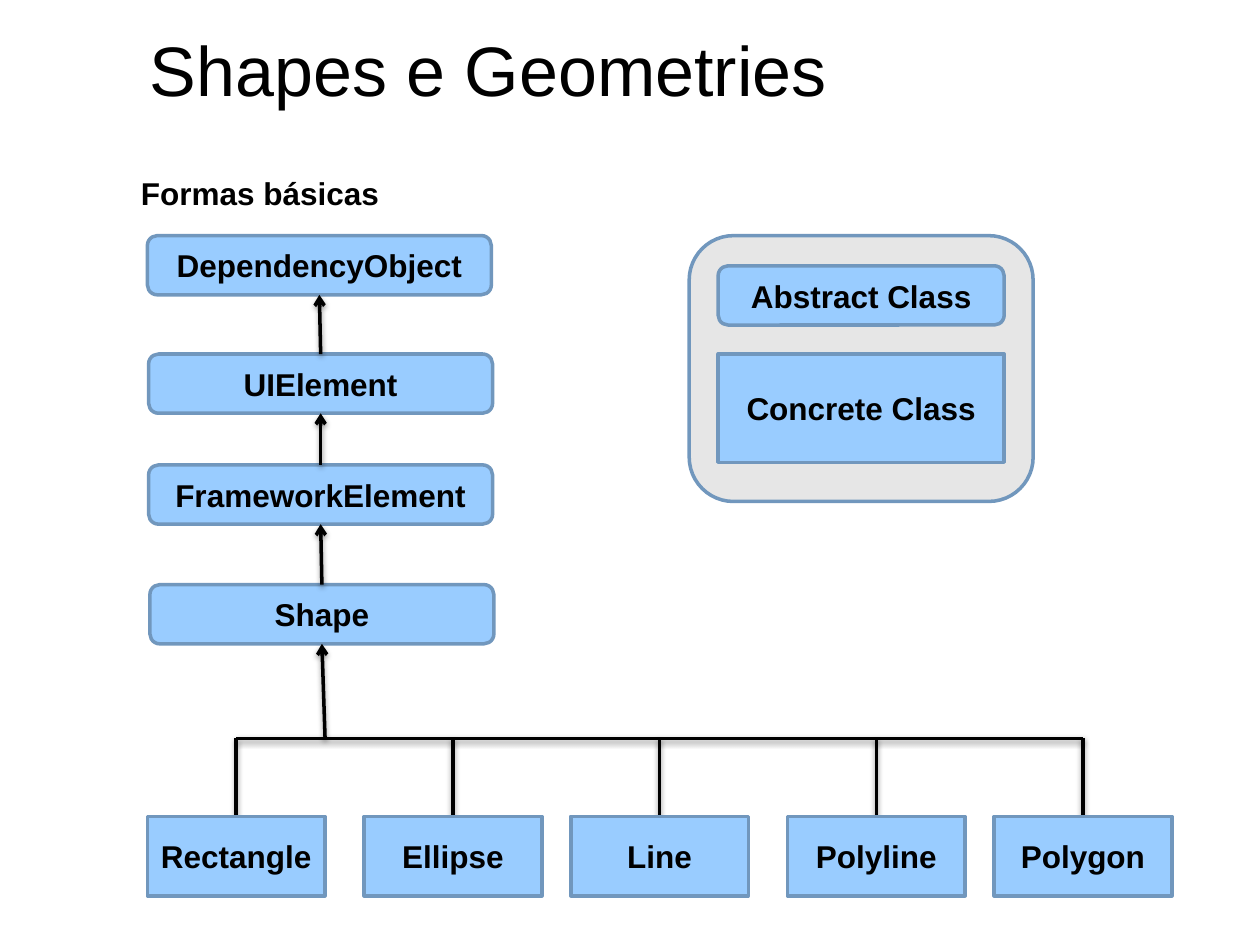
from dataclasses import dataclass

from lxml import etree
from pptx import Presentation
from pptx.dml.color import RGBColor
from pptx.enum.shapes import MSO_CONNECTOR, MSO_SHAPE
from pptx.enum.text import MSO_ANCHOR, MSO_AUTO_SIZE, PP_ALIGN
from pptx.oxml import parse_xml
from pptx.oxml.ns import nsdecls, qn
from pptx.shapes.autoshape import Shape
from pptx.shapes.connector import Connector
from pptx.slide import Slide
from pptx.text.text import TextFrame
from pptx.util import Inches, Pt

ABSTRACT = MSO_SHAPE.ROUNDED_RECTANGLE
CONCRETE = MSO_SHAPE.RECTANGLE
STRAIGHT = MSO_CONNECTOR.STRAIGHT
LEFT, CENTER = PP_ALIGN.LEFT, PP_ALIGN.CENTER
TOP, MIDDLE = MSO_ANCHOR.TOP, MSO_ANCHOR.MIDDLE
FIT_SHAPE = MSO_AUTO_SIZE.SHAPE_TO_FIT_TEXT

BLACK = RGBColor(0x00, 0x00, 0x00)
LIGHT_BLUE = RGBColor(0x99, 0xCC, 0xFF)
STEEL_BLUE = RGBColor(0x71, 0x97, 0xBD)
LIGHT_GRAY = RGBColor(0xE6, 0xE6, 0xE6)
FONT = "Arial"
TOP_SITE, BOTTOM_SITE = 0, 2

ABSTRACT_HEIGHT = 0.47
BUS_Y = 5.86
CONCRETE_Y = 6.48
CONCRETE_WIDTH = 1.41

SHADOW = (
    f'<a:effectLst {nsdecls("a")}>'
    '<a:outerShdw blurRad="39370" dist="20320" dir="5400000" rotWithShape="0">'
    '<a:srgbClr val="000000"><a:alpha val="38000"/></a:srgbClr>'
    "</a:outerShdw></a:effectLst>"
)


@dataclass(frozen=True)
class ClassBox:
    name: str
    left: float
    top: float
    width: float
    height: float = ABSTRACT_HEIGHT
    kind: MSO_SHAPE = ABSTRACT
    fill: RGBColor = LIGHT_BLUE


HIERARCHY = [
    ClassBox("DependencyObject", 1.17, 1.87, 2.73),
    ClassBox("UIElement", 1.18, 2.81, 2.73),
    ClassBox("FrameworkElement", 1.18, 3.69, 2.73),
    ClassBox("Shape", 1.19, 4.64, 2.73),
]
SUBCLASSES = [
    ClassBox(name, left, CONCRETE_Y, CONCRETE_WIDTH, 0.63, CONCRETE)
    for name, left in [
        ("Rectangle", 1.17),
        ("Ellipse", 2.89),
        ("Line", 4.53),
        ("Polyline", 6.25),
        ("Polygon", 7.89),
    ]
]
LEGEND = [
    ClassBox("", 5.47, 1.87, 2.73, 2.11, fill=LIGHT_GRAY),
    ClassBox("Abstract Class", 5.7, 2.11, 2.27),
    ClassBox("Concrete Class", 5.7, 2.81, 2.27, 0.86, CONCRETE),
]


def write_text(frame: TextFrame, text: str, size: float, bold: bool,
               align: PP_ALIGN, anchor: MSO_ANCHOR) -> None:
    frame.text = text
    frame.word_wrap = True
    frame.vertical_anchor = anchor
    paragraph = frame.paragraphs[0]
    paragraph.alignment = align
    paragraph.font.name = FONT
    paragraph.font.size = Pt(size)
    paragraph.font.bold = bold
    paragraph.font.color.rgb = BLACK


def add_box(slide: Slide, box: ClassBox) -> Shape:
    shape = slide.shapes.add_shape(
        box.kind, Inches(box.left), Inches(box.top),
        Inches(box.width), Inches(box.height))
    shape.shadow.inherit = False
    shape.fill.solid()
    shape.fill.fore_color.rgb = box.fill
    shape.line.color.rgb = STEEL_BLUE
    shape.line.width = Pt(2)
    if box.name:
        frame = shape.text_frame
        frame.margin_left = frame.margin_right = Inches(0.05)
        write_text(frame, box.name, 18, True, CENTER, MIDDLE)
    return shape


def add_line(slide: Slide, x1: float, y1: float, x2: float, y2: float,
             arrow: bool = False) -> Connector:
    line = slide.shapes.add_connector(
        STRAIGHT, Inches(x1), Inches(y1), Inches(x2), Inches(y2))
    line.line.color.rgb = BLACK
    line.line.width = Pt(2)
    properties = line._element.spPr
    if arrow:
        etree.SubElement(properties.find(qn("a:ln")), qn("a:tailEnd"), type="arrow")
    properties.append(parse_xml(SHADOW))
    return line


def build() -> None:
    presentation = Presentation()
    presentation.slide_width = Inches(10)
    presentation.slide_height = Inches(7.5)
    slide = presentation.slides.add_slide(presentation.slide_layouts[5])

    # Title and subtitle
    title = slide.shapes.title
    title.left, title.top = Inches(1.09), Inches(0.16)
    title.width, title.height = Inches(6.02), Inches(0.77)
    write_text(title.text_frame, "Shapes e Geometries", 40, False, LEFT, TOP)
    title.text_frame.auto_size = FIT_SHAPE
    subtitle = slide.shapes.add_textbox(
        Inches(1.02), Inches(1.33), Inches(8.75), Inches(0.4))
    write_text(subtitle.text_frame, "Formas básicas", 18, True, LEFT, TOP)
    subtitle.text_frame.auto_size = FIT_SHAPE

    # Abstract classes, each pointing to its parent
    ancestors = [add_box(slide, box) for box in HIERARCHY]
    for parent, child in zip(ancestors, ancestors[1:]):
        arrow = add_line(slide, 0, 0, 1, 1, arrow=True)
        arrow.begin_connect(child, TOP_SITE)
        arrow.end_connect(parent, BOTTOM_SITE)

    # Branches from the concrete classes up to Shape
    centers = [box.left + box.width / 2 for box in SUBCLASSES]
    add_line(slide, centers[0], BUS_Y, centers[-1], BUS_Y)
    for center in centers:
        add_line(slide, center, BUS_Y, center, CONCRETE_Y)
    trunk = add_line(slide, 2.58, BUS_Y, 2.56, 5.11, arrow=True)
    trunk.end_connect(ancestors[-1], BOTTOM_SITE)

    # Concrete classes and legend
    for box in SUBCLASSES + LEGEND:
        add_box(slide, box)

    presentation.save("out.pptx")


if __name__ == "__main__":
    build()
